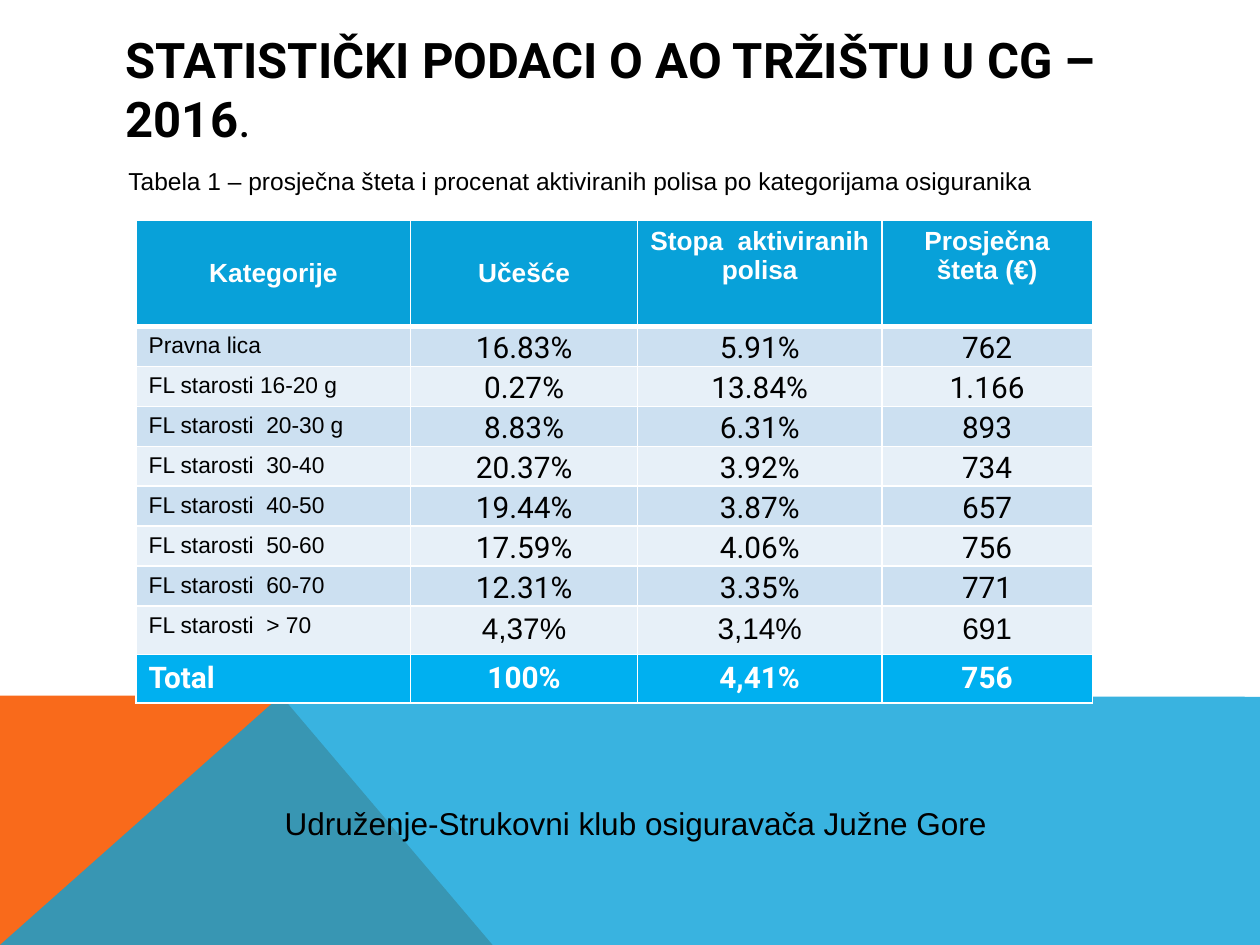
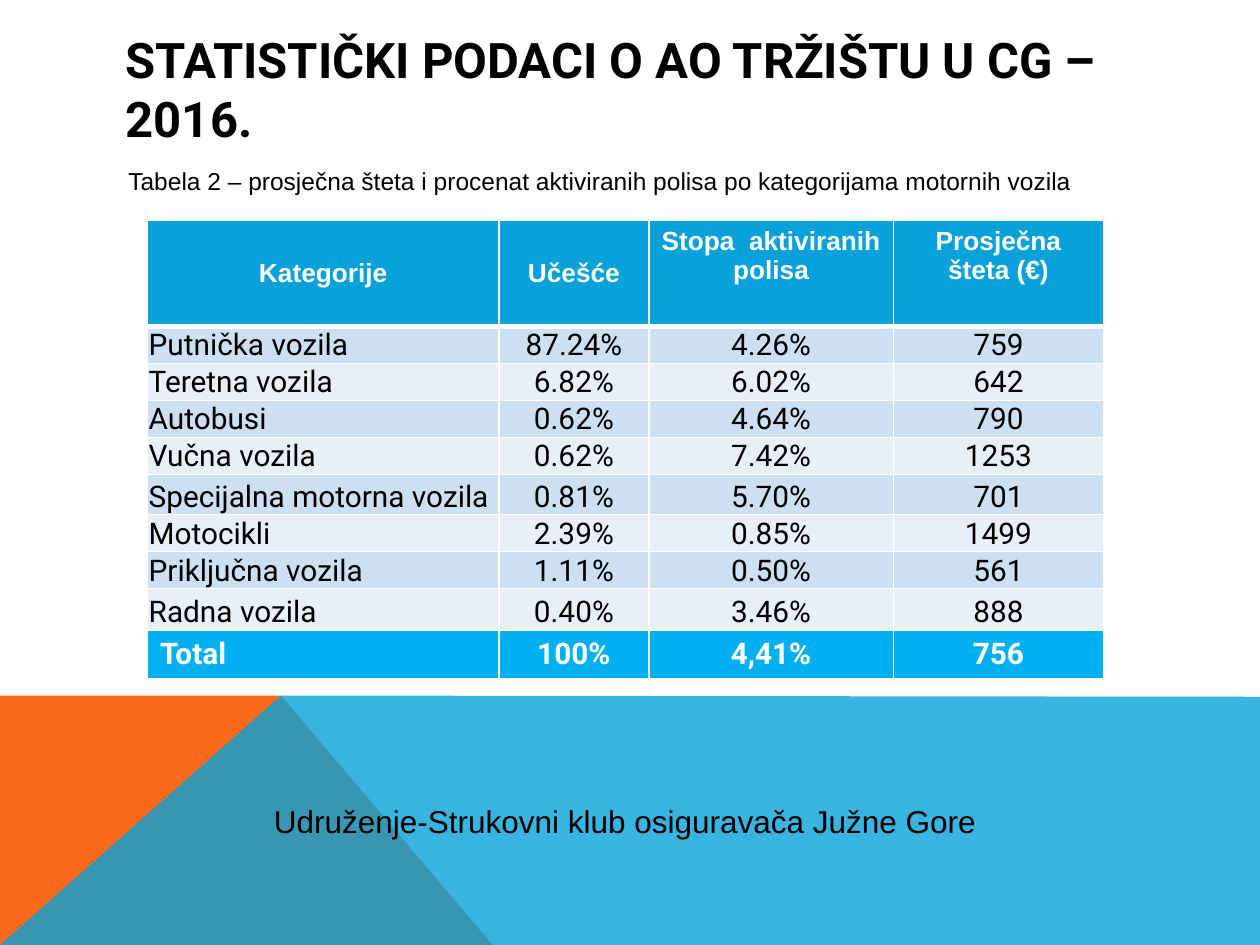
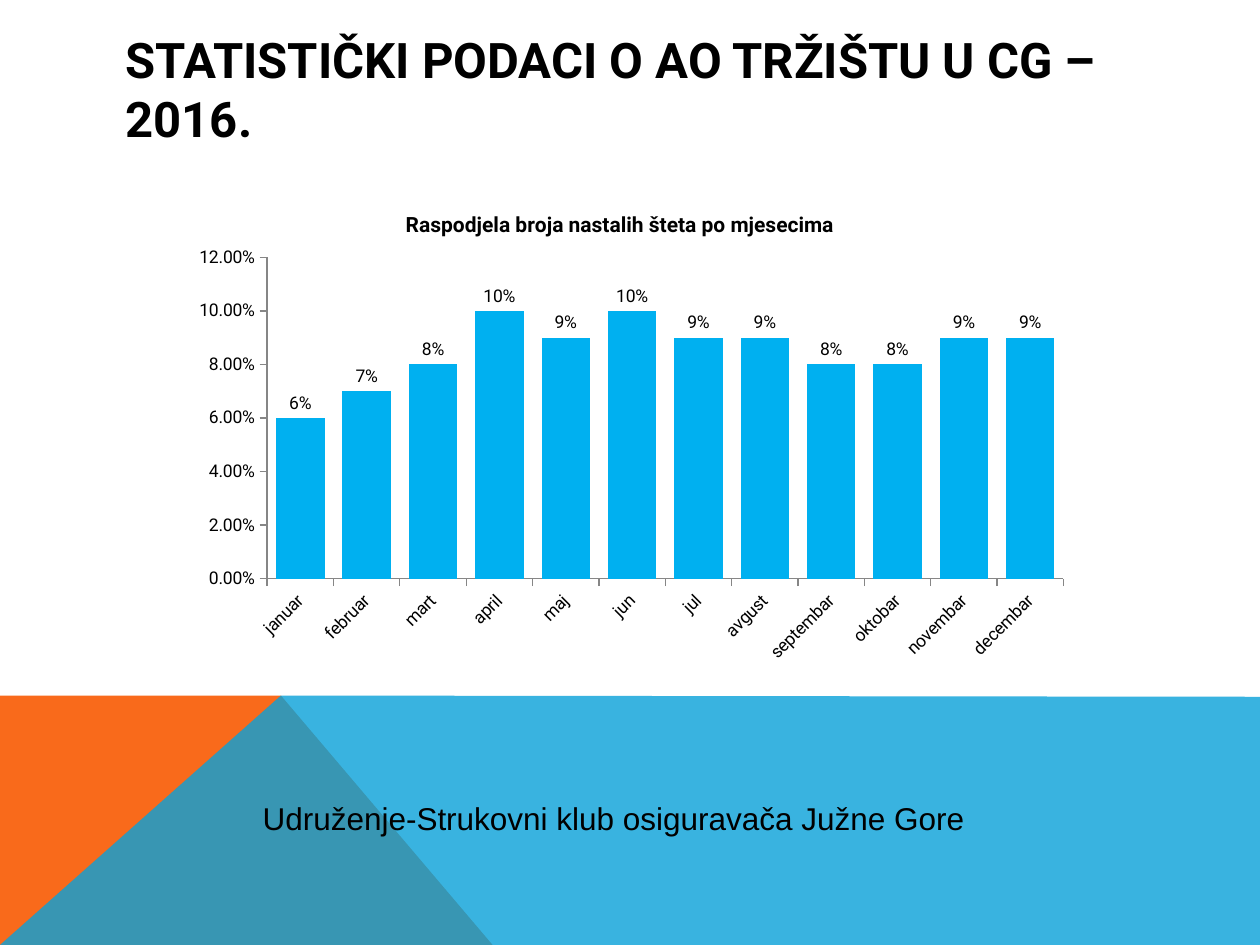
from lxml.etree import SubElement
from pptx import Presentation
from pptx.chart.data import CategoryChartData
from pptx.dml.color import RGBColor
from pptx.enum.chart import XL_CHART_TYPE as ChartType, XL_LABEL_POSITION as LabelPos
from pptx.enum.chart import XL_TICK_MARK as Tick
from pptx.enum.text import MSO_ANCHOR as Anchor, PP_ALIGN as Align
from pptx.oxml import parse_xml
from pptx.oxml.ns import nsdecls, qn
from pptx.util import Inches, Pt

COLORS = {
    "text": "000000", "white": "FFFFFF", "orange": "F96A1B", "blue": "08A1D9",
    "bright": "00B0F0", "odd row": "CCE0F1", "even row": "E7F0F8", "axis": "868686",
}
COLORS = {name: RGBColor.from_string(value) for name, value in COLORS.items()}
HEADING, BODY = "Roboto", "Arial"
TITLE = "STATISTIČKI PODACI O AO TRŽIŠTU U CG – 2016"
ORGANISATION = "Udruženje-Strukovni klub osiguravača Južne Gore"
HEADER = ["Kategorije", "Učešće", "Stopa  aktiviranih polisa", "Prosječna šteta (€)"]
TOTAL = ["Total", "100%", "4,41%", "756"]
BANDS = [
    ("orange", [(0, 7.5), (0, 5.52), (2.23, 5.52), (3.91, 7.5)]),
    ("blue", [(0, 7.5), (2.23, 5.52), (10, 5.53), (10, 7.5)]),
]
ROOMY = (0.1, 0.05, 0.1, 0.05)
TIGHT = (0.01, 0.01, 0.01, 0)


def write(paragraph, text, size, font, color="text", bold=False):
    run = paragraph.add_run()
    run.text = text
    run.font.size, run.font.name, run.font.bold = Pt(size), font, bold
    run.font.color.rgb = COLORS[color]


def add_text_frame(slide, box, anchor):
    """Add a wrapping text box and return its text frame."""
    frame = slide.shapes.add_textbox(*map(Inches, box)).text_frame
    frame.word_wrap = True
    frame.vertical_anchor = anchor
    return frame


prs = Presentation()
prs.slide_width, prs.slide_height = Inches(10), Inches(7.5)

# Bands, title and footer on every slide
slides = []
for title_width, dot_bold, footer_box in [
    (8.35, False, (1.17, 6.33, 7.75, 0.4)),
    (8.52, True, (1.17, 6.32, 7.58, 0.4)),
    (8.43, True, (1.08, 6.29, 7.58, 0.4)),
]:
    slide = prs.slides.add_slide(prs.slide_layouts[6])
    slides.append(slide)
    for color, corners in BANDS:
        points = [(Inches(x), Inches(y)) for x, y in corners]
        outline = slide.shapes.build_freeform(*points[0])
        outline.add_line_segments(points[1:])
        band = outline.convert_to_shape()
        band.shadow.inherit = False
        band.line.fill.background()
        band.fill.solid()
        band.fill.fore_color.rgb = COLORS[color]
    # The last band, the blue one, lets the orange show through
    blue_fill = band.fill._xPr.find(qn("a:solidFill"))[0]
    SubElement(blue_fill, qn("a:alpha"), val="80000")

    title = add_text_frame(slide, (0.9, 0.4, title_width, 0.6), Anchor.MIDDLE).paragraphs[0]
    write(title, TITLE, 28, HEADING, bold=True)
    write(title, ".", 28, HEADING, bold=dot_bold)
    footer = add_text_frame(slide, footer_box, Anchor.TOP).paragraphs[0]
    footer.alignment = Align.CENTER
    write(footer, ORGANISATION, 18, BODY)

# Slides 1 and 2: damage by category
insured = [
    ["Pravna lica", "16.83%", "5.91%", "762"],
    ["FL starosti 16-20 g", "0.27%", "13.84%", "1.166"],
    ["FL starosti  20-30 g", "8.83%", "6.31%", "893"],
    ["FL starosti  30-40", "20.37%", "3.92%", "734"],
    ["FL starosti  40-50", "19.44%", "3.87%", "657"],
    ["FL starosti  50-60", "17.59%", "4.06%", "756"],
    ["FL starosti  60-70", "12.31%", "3.35%", "771"],
    ["FL starosti  > 70", "4,37%", "3,14%", "691"],
]
vehicles = [
    ["Putnička vozila", "87.24%", "4.26%", "759"],
    ["Teretna vozila", "6.82%", "6.02%", "642"],
    ["Autobusi", "0.62%", "4.64%", "790"],
    ["Vučna vozila", "0.62%", "7.42%", "1253"],
    ["Specijalna motorna vozila", "0.81%", "5.70%", "701"],
    ["Motocikli", "2.39%", "0.85%", "1499"],
    ["Priključna vozila", "1.11%", "0.50%", "561"],
    ["Radna vozila", "0.40%", "3.46%", "888"],
]
by_insured = dict(
    caption="Tabela 1 – prosječna šteta i procenat aktiviranih polisa po kategorijama osiguranika",
    caption_width=7.58, left=1.08, rows=insured, widths=[2.18, 1.8, 1.94, 1.67],
    heights=[0.84] + [0.31] * 7 + [0.38, 0.38],
    label_style=(13, BODY, ROOMY, Anchor.TOP), last_style=(17, BODY, ROOMY, Anchor.TOP),
)
value_style = (17, HEADING, TIGHT, Anchor.BOTTOM)
by_vehicle = dict(
    caption="Tabela 2 – prosječna šteta i procenat aktiviranih polisa po kategorijama motornih vozila",
    caption_width=8.17, left=1.17, rows=vehicles, widths=[2.79, 1.19, 1.94, 1.67],
    heights=[0.84] + [0.29] * 4 + [0.32, 0.29, 0.29, 0.33, 0.38],
    label_style=value_style, last_style=value_style,
)

for slide, damage in zip(slides, [by_insured, by_vehicle]):
    caption_box = (0.92, 1, damage["caption_width"], 0.6)
    caption = add_text_frame(slide, caption_box, Anchor.BOTTOM).paragraphs[0]
    caption.space_before = Pt(8)
    write(caption, damage["caption"], 14, BODY)

    rows = [HEADER, *damage["rows"], TOTAL]
    widths, heights = damage["widths"], damage["heights"]
    last = len(rows) - 1
    table = slide.shapes.add_table(
        len(rows), len(HEADER), Inches(damage["left"]), Inches(1.75),
        Inches(sum(widths)), Inches(sum(heights))).table
    table.horz_banding = False
    for column, width in zip(table.columns, widths):
        column.width = Inches(width)

    for r, (row, height) in enumerate(zip(rows, heights)):
        table.rows[r].height = Inches(height)
        for c, text in enumerate(row):
            color, bold = "text", False
            if r == 0:
                style = (15, BODY, ROOMY, Anchor.MIDDLE if c < 2 else Anchor.TOP)
                fill, color, bold = "blue", "white", True
            elif r == last:
                style = (17, HEADING, ROOMY, Anchor.TOP)
                fill, color, bold = "bright", "white", True
            else:
                fill = "odd row" if r % 2 else "even row"
                if c == 0:
                    style = damage["label_style"]
                else:
                    style = damage["last_style"] if r == last - 1 else value_style
            size, font, insets, anchor = style

            cell = table.cell(r, c)
            cell.margin_left, cell.margin_top, cell.margin_right, cell.margin_bottom = map(
                Inches, insets)
            cell.vertical_anchor = anchor
            for side in "LRTB":
                under_header = (r, side) in [(0, "B"), (1, "T")]
                border = SubElement(cell._tc.get_or_add_tcPr(), qn(f"a:ln{side}"),
                                    w=str(Pt(3 if under_header else 1)))
                border_fill = SubElement(border, qn("a:solidFill"))
                SubElement(border_fill, qn("a:srgbClr"), val=str(COLORS["white"]))
            cell.fill.solid()
            cell.fill.fore_color.rgb = COLORS[fill]
            paragraph = cell.text_frame.paragraphs[0]
            paragraph.alignment = Align.LEFT if c == 0 and r else Align.CENTER
            write(paragraph, text, size, font, color, bold)

# Slide 3: damage by month
months = CategoryChartData(number_format="0%")
months.categories = ["januar", "februar", "mart", "april", "maj", "jun", "jul", "avgust",
                     "septembar", "oktobar", "novembar", "decembar"]
months.add_series("Series 1", [0.06, 0.07, 0.08, 0.1, 0.09, 0.1,
                               0.09, 0.09, 0.08, 0.08, 0.09, 0.09])
chart = slides[2].shapes.add_chart(
    ChartType.COLUMN_CLUSTERED, Inches(0.92), Inches(1.5), Inches(8), Inches(4.18), months).chart
chart.has_legend = False
chart.font.size, chart.font.name = Pt(10), HEADING
chart.font.color.rgb = COLORS["text"]
chart.has_title = True
write(chart.chart_title.text_frame.paragraphs[0],
      "Raspodjela broja nastalih šteta po mjesecima", 12, HEADING, bold=True)
chart.chart_title.include_in_layout = False

plot = chart.plots[0]
plot.gap_width = 37
plot.vary_by_categories = False
columns = plot.series[0].format.fill
columns.solid()
columns.fore_color.rgb = COLORS["bright"]
plot.has_data_labels = True
labels = plot.data_labels
labels.show_value = True
labels.number_format, labels.number_format_is_linked = "0%", False
labels.position = LabelPos.OUTSIDE_END

for axis in (chart.category_axis, chart.value_axis):
    axis.has_major_gridlines = False
    axis.major_tick_mark = Tick.OUTSIDE
    axis.format.line.color.rgb = COLORS["axis"]
    axis.format.line.width = Pt(0.75)
share_axis = chart.value_axis
share_axis.minimum_scale, share_axis.maximum_scale, share_axis.major_unit = 0, 0.12, 0.02
share_axis.tick_labels.number_format = "0.00%"
share_axis.tick_labels.number_format_is_linked = False
chart.category_axis.tick_labels.font.size = Pt(10)
month_text = chart.category_axis._element.find(qn("c:txPr")).find(qn("a:bodyPr"))
month_text.set("rot", "-2700000")
month_text.set("vert", "horz")

plot_area = chart._chartSpace.chart.plotArea
for layout in plot_area.findall(qn("c:layout")):
    plot_area.remove(layout)
plot_area.insert(0, parse_xml(
    f'<c:layout {nsdecls("c")}><c:manualLayout><c:layoutTarget val="inner"/>'
    '<c:xMode val="edge"/><c:yMode val="edge"/><c:x val="0.15"/><c:y val="0.13"/>'
    '<c:w val="0.79"/><c:h val="0.61"/></c:manualLayout></c:layout>'))

prs.save("out.pptx")
